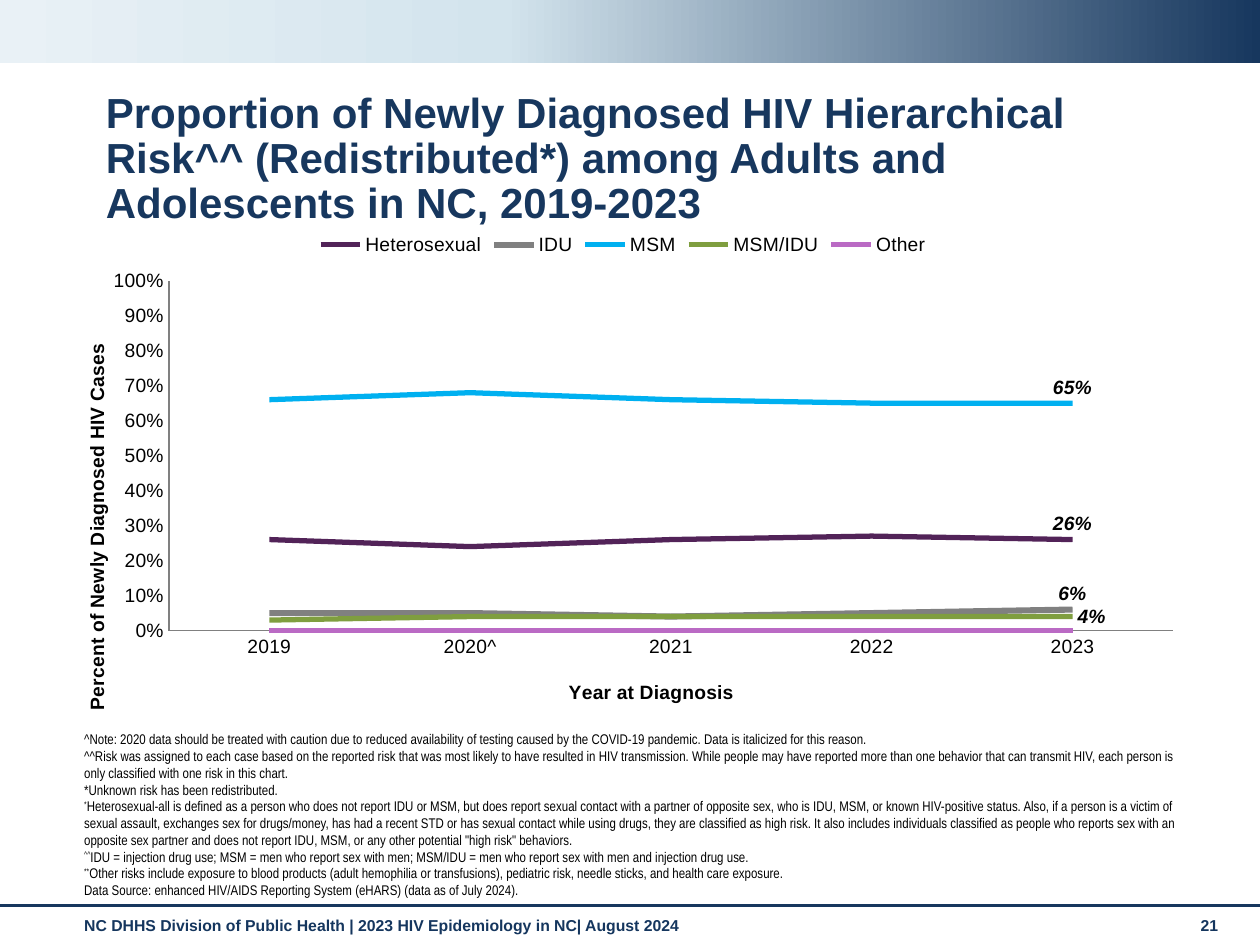
"""Build a slide with a line chart of newly diagnosed HIV cases by risk group."""
from lxml import etree
from pptx import Presentation
from pptx import util as u
from pptx.chart.data import CategoryChartData
from pptx.dml.color import RGBColor
from pptx.enum import chart as ch, shapes, text
from pptx.oxml import parse_xml
from pptx.oxml.ns import nsdecls, qn

NAVY, BLACK, GREY = "17375E", "000000", "808080"
FOOTER_NAVY = "15365E"
BAND = [(0, NAVY), (60, "D3E4ED"), (100, "E9F1F6")]
TITLE = ("Proportion of Newly Diagnosed HIV Hierarchical Risk^^ (Redistributed*) "
         "among Adults and Adolescents in NC, 2019-2023")
FOOTER = [
    ("NC DHHS Division of Public Health | 2023 HIV Epidemiology in NC| August 2024",
     (0.57, 7.22, 8.74, 0.29)),
    ("21", (9.43, 7.22, 0.44, 0.3)),
]
YEARS = ["2019", "2020^", "2021", "2022", "2023"]
ABOVE, RIGHT = ch.XL_LABEL_POSITION.ABOVE, ch.XL_LABEL_POSITION.RIGHT
SERIES = [
    ("Heterosexual", [0.26, 0.24, 0.26, 0.27, 0.26], "522358", 3, ABOVE),
    ("IDU", [0.05, 0.05, 0.04, 0.05, 0.06], GREY, 3.5, ABOVE),
    ("MSM", [0.66, 0.68, 0.66, 0.65, 0.65], "00B0F0", 3, ABOVE),
    ("MSM/IDU", [0.03, 0.04, 0.04, 0.04, 0.04], "7F9E3F", 3, RIGHT),
    ("Other", [0, 0, 0, 0, 0], "BA6AC4", 3, None),
]
NOTES = [
    ("", "^Note: 2020 data should be treated with caution due to reduced availability of "
     "testing caused by the COVID-19 pandemic. Data is italicized for this reason."),
    ("", "^^Risk was assigned to each case based on the reported risk that was most likely to "
     "have resulted in HIV transmission. While people may have reported more than one behavior "
     "that can transmit HIV, each person is only classified with one risk in this chart."),
    ("", "*Unknown risk has been redistributed."),
    ("*", "Heterosexual-all is defined as a person who does not report IDU or MSM, but does "
     "report sexual contact with a partner of opposite sex, who is IDU, MSM, or known "
     "HIV-positive status. Also, if a person is a victim of sexual assault, exchanges sex for "
     "drugs/money, has had a recent STD or has sexual contact while using drugs, they are "
     "classified as high risk. It also includes individuals classified as people who reports "
     "sex with an opposite sex partner and does not report IDU, MSM, or any other potential "
     '"high risk" behaviors.'),
    ("^^", "IDU = injection drug use; MSM = men who report sex with men; MSM/IDU = men who "
     "report sex with men and injection drug use."),
    ("**", "Other risks include exposure to blood products (adult hemophilia or transfusions), "
     "pediatric risk, needle sticks, and health care exposure."),
    ("", "Data Source: enhanced HIV/AIDS Reporting System (eHARS) (data as of July 2024)."),
]


def rgb(value):
    return RGBColor.from_string(value)


def box(*lengths):
    return [u.Inches(n) for n in lengths]


def style(font, size, color=BLACK, name="Arial", bold=False, italic=False):
    font.size, font.name, font.bold, font.italic = u.Pt(size), name, bold, italic
    font.color.rgb = rgb(color)


def add_run(p, words, *args, **kwargs):
    r = p.add_run()
    r.text = words
    style(r.font, *args, **kwargs)
    return r


def add_text(slide, at):
    tf = slide.shapes.add_textbox(*box(*at)).text_frame
    tf.word_wrap = True
    return tf


def place(el, x, y, w=None, h=None):
    """Give a chart part a manual layout, in shares of the chart."""
    old = el.find(qn("c:layout"))
    if old is not None:
        el.remove(old)
    values = [("xMode", "edge"), ("yMode", "edge"), ("x", x), ("y", y)]
    if w:
        values = [("layoutTarget", "inner")] + values + [("w", w), ("h", h)]
    parts = "".join(f'<c:{tag} val="{val}"/>' for tag, val in values)
    layout = parse_xml(f'<c:layout {nsdecls("c")}><c:manualLayout>{parts}'
                       '</c:manualLayout></c:layout>')
    el.insert(0 if el.find(qn("c:tx")) is None else 1, layout)


def add_band(slide):
    sp = slide.shapes.add_shape(shapes.MSO_SHAPE.RECTANGLE, *box(0, 0, 10, 0.5))
    sp.shadow.inherit = False
    sp.line.fill.background()
    stops = "".join(f'<a:gs pos="{pos * 1000}"><a:srgbClr val="{color}"/></a:gs>'
                    for pos, color in BAND)
    sp._element.spPr.find(qn("a:prstGeom")).addnext(parse_xml(
        f'<a:gradFill {nsdecls("a")} rotWithShape="1"><a:gsLst>{stops}</a:gsLst>'
        '<a:lin ang="10800000" scaled="0"/></a:gradFill>'))


def add_rule(slide):
    line = slide.shapes.add_connector(shapes.MSO_CONNECTOR.STRAIGHT, *box(0, 7.19, 10, 7.19))
    line.line.color.rgb, line.line.width = rgb(NAVY), u.Pt(1.75)
    etree.SubElement(line._element.spPr, qn("a:effectLst"))


def add_title(slide):
    title = slide.shapes.title
    title.left, title.top, title.width, title.height = box(0.74, 0.68, 8.58, 0.6)
    tf = title.text_frame
    tf.auto_size, tf.vertical_anchor = text.MSO_AUTO_SIZE.NONE, text.MSO_ANCHOR.TOP
    p = tf.paragraphs[0]
    p.alignment, p.line_spacing = text.PP_ALIGN.LEFT, 0.9
    add_run(p, TITLE, 24, NAVY, bold=True)


def add_risk_chart(slide):
    data = CategoryChartData(number_format="0%")
    data.categories = YEARS
    for name, values, *_ in SERIES:
        data.add_series(name, values)
    chart = slide.shapes.add_chart(ch.XL_CHART_TYPE.LINE, *box(0.36, 1.74, 9.17, 4.36), data).chart
    style(chart.font, 11)
    chart.has_title = False
    chart.has_legend = True
    chart.legend.position = ch.XL_LEGEND_POSITION.TOP
    chart.legend.include_in_layout = False
    chart.plots[0].vary_by_categories = False
    for axis, words, x, y in [
        (chart.category_axis, "Year at Diagnosis", 0.45, 0.83),
        (chart.value_axis, "Percent of Newly Diagnosed HIV Cases", 0.03, 0.22),
    ]:
        axis.has_major_gridlines = False
        axis.major_tick_mark = axis.minor_tick_mark = ch.XL_TICK_MARK.NONE
        axis.format.line.color.rgb, axis.format.line.width = rgb(GREY), u.Pt(0.75)
        add_run(axis.axis_title.text_frame.paragraphs[0], words, 11, bold=True)
        place(axis.axis_title._element, x, y)
    axis = chart.value_axis
    axis.minimum_scale, axis.maximum_scale, axis.major_unit = 0, 1, 0.1
    axis.tick_labels.number_format, axis.tick_labels.number_format_is_linked = "0%", False
    for series, (_, values, color, width, position) in zip(chart.series, SERIES):
        series.smooth = False
        series.marker.style = ch.XL_MARKER_STYLE.NONE
        series.format.line.color.rgb, series.format.line.width = rgb(color), u.Pt(width)
        if position is not None:
            series.data_labels.show_value = False
            label = series.points[len(values) - 1].data_label
            style(label.font, 11, bold=True, italic=True)
            label.position = position
    place(chart._chartSpace.chart.plotArea, 0.107, 0.112, 0.869, 0.637)


def add_notes(slide):
    tf = add_text(slide, (0.57, 5.75, 9.06, 1.43))
    tf.vertical_anchor = text.MSO_ANCHOR.BOTTOM
    for i, (mark, words) in enumerate(NOTES):
        p = tf.add_paragraph() if i else tf.paragraphs[0]
        if mark:
            r = add_run(p, mark, 8, name="Arial Narrow")
            r.font._element.set("baseline", "30000")
        add_run(p, words, 8, name="Arial Narrow")


def main():
    prs = Presentation()
    prs.slide_width, prs.slide_height = box(10, 7.5)
    slide = prs.slides.add_slide(prs.slide_layouts[5])
    for words, at in FOOTER:
        add_run(add_text(slide, at).paragraphs[0], words, 9, FOOTER_NAVY, bold=True)
    add_band(slide)
    add_rule(slide)
    add_title(slide)
    add_risk_chart(slide)
    add_notes(slide)
    prs.save("out.pptx")


if __name__ == "__main__":
    main()
